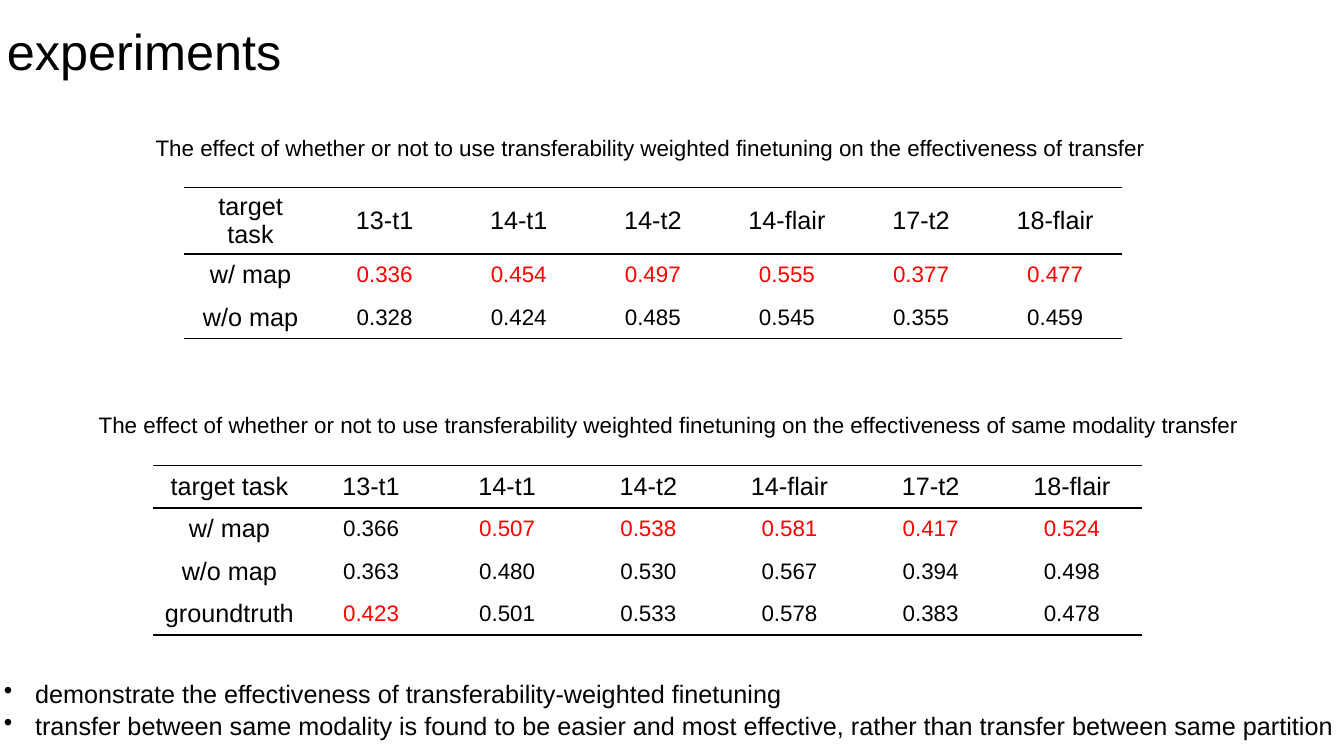
import dataclasses
import typing

import lxml.etree
import pptx
import pptx.dml.color
import pptx.enum.text
import pptx.oxml.ns
import pptx.util

Inches = pptx.util.Inches
Pt = pptx.util.Pt
ALIGN = pptx.enum.text.PP_ALIGN
ANCHOR = pptx.enum.text.MSO_ANCHOR


@dataclasses.dataclass(frozen=True)
class Theme:
    """Fonts, colours and type sizes."""
    font: str = "Arial"
    ink: str = "000000"
    best: str = "FF0000"
    title: int = 36
    label: int = 18
    value: int = 16
    rule: int = 1


@dataclasses.dataclass(frozen=True)
class TextBlock:
    """A text box and its paragraph formats."""
    lines: tuple[str, ...]
    left: float
    top: float
    width: float
    height: float
    size: int
    formats: dict[str, typing.Any]
    anchor: typing.Any = ANCHOR.TOP
    bulleted: bool = False


@dataclasses.dataclass(frozen=True)
class ScoreTable:
    """A table of scores by method and target task."""
    left: float
    top: float
    widths: tuple[float, ...]
    header_height: float
    scores: dict[str, tuple[str, ...]]


THEME = Theme()
ROW_HEIGHT = 0.42
TASKS = ("13-t1", "14-t1", "14-t2", "14-flair", "17-t2", "18-flair")
CAPTION = "The effect of whether or not to use transferability weighted finetuning on the effectiveness of "
CAPTION_FORMATS = {"alignment": ALIGN.CENTER, "line_spacing": 0.9, "space_before": Pt(10)}

TABLES = (
    ScoreTable(1.82, 1.86, (1.33,) * 7, 0.66, {
        "w/ map": ("0.336", "0.454", "0.497", "0.555", "0.377", "0.477"),
        "w/o map": ("0.328", "0.424", "0.485", "0.545", "0.355", "0.459"),
    }),
    ScoreTable(1.52, 4.62, (1.51, 1.3) + (1.4,) * 5, ROW_HEIGHT, {
        "w/ map": ("0.366", "0.507", "0.538", "0.581", "0.417", "0.524"),
        "w/o map": ("0.363", "0.480", "0.530", "0.567", "0.394", "0.498"),
        "groundtruth": ("0.423", "0.501", "0.533", "0.578", "0.383", "0.478"),
    }),
)

TEXTS = (
    TextBlock((CAPTION + "transfer",), 0.7, 1.31, 11.5, 0.37, THEME.value, CAPTION_FORMATS),
    TextBlock((CAPTION + "same modality transfer",), 0.62, 4.06, 12.02, 0.43,
              THEME.value, CAPTION_FORMATS),
    TextBlock(("experiments",), -0.03, 0, 3.91, 0.99, THEME.title, {}, ANCHOR.MIDDLE),
    TextBlock(("demonstrate the effectiveness of transferability-weighted finetuning",
               "transfer between same modality is found to be easier and most effective, "
               "rather than transfer between same partition"),
              -0.06, 6.66, 13.49, 0.71, THEME.label, {"line_spacing": 1.07}, bulleted=True),
)


def apply_formats(target: typing.Any, formats: dict[str, typing.Any]) -> None:
    """Set each named attribute on the target."""
    for name, value in formats.items():
        setattr(target, name, value)


def write_span(para: typing.Any, text: str, size: int, color: str) -> None:
    """Add one formatted span to a paragraph."""
    span = para.add_run()
    span.text = text
    apply_formats(span.font, {"name": THEME.font, "size": Pt(size), "bold": False})
    span.font.color.rgb = pptx.dml.color.RGBColor.from_string(color)


def add_bullet(para: typing.Any) -> None:
    """Give a paragraph a hanging round bullet."""
    properties = para._p.get_or_add_pPr()
    properties.set("marL", str(Inches(0.31)))
    properties.set("indent", str(Inches(-0.31)))
    bullet = lxml.etree.SubElement(properties, pptx.oxml.ns.qn("a:buChar"))
    bullet.set("char", "•")


def add_text(page: typing.Any, block: TextBlock) -> None:
    """Draw a text block."""
    box = page.shapes.add_textbox(*map(Inches, (block.left, block.top, block.width, block.height)))
    frame = box.text_frame
    apply_formats(frame, {"word_wrap": True, "vertical_anchor": block.anchor})
    for index, line in enumerate(block.lines):
        para = frame.add_paragraph() if index else frame.paragraphs[0]
        apply_formats(para, block.formats)
        if block.bulleted:
            add_bullet(para)
        write_span(para, line, block.size, THEME.ink)


def set_borders(cell: typing.Any, ruled: set[str]) -> None:
    """Rule the named edges of a cell and clear the others."""
    qn = pptx.oxml.ns.qn
    properties = cell._tc.get_or_add_tcPr()
    for index, edge in enumerate(("lnL", "lnR", "lnT", "lnB")):
        line = lxml.etree.Element(qn(f"a:{edge}"), w=str(Pt(THEME.rule)))
        if edge in ruled:
            fill = lxml.etree.SubElement(line, qn("a:solidFill"))
            lxml.etree.SubElement(fill, qn("a:srgbClr"), val=THEME.ink)
        else:
            lxml.etree.SubElement(line, qn("a:noFill"))
        properties.insert(index, line)


def add_scores(page: typing.Any, spec_table: ScoreTable) -> None:
    """Draw a score table with the best value of each task highlighted."""
    rows = [("target task", *TASKS)]
    rows += [(method, *values) for method, values in spec_table.scores.items()]
    best = [max(values, key=float) for values in zip(*spec_table.scores.values())]
    heights = [spec_table.header_height] + [ROW_HEIGHT] * len(spec_table.scores)
    frame = page.shapes.add_table(
        len(rows), len(rows[0]), Inches(spec_table.left), Inches(spec_table.top),
        Inches(sum(spec_table.widths)), Inches(sum(heights)))
    table = frame.table
    apply_formats(table, {"first_row": False, "horz_banding": False})
    for column, width in zip(table.columns, spec_table.widths):
        column.width = Inches(width)
    for row_index, texts in enumerate(rows):
        table.rows[row_index].height = Inches(heights[row_index])
        ruled = {"lnT"} if row_index < 2 else set()
        if row_index in (0, len(rows) - 1):
            ruled.add("lnB")
        for column_index, text in enumerate(texts):
            cell = table.cell(row_index, column_index)
            cell.vertical_anchor = ANCHOR.MIDDLE
            cell.fill.background()
            set_borders(cell, ruled)
            is_value = row_index > 0 and column_index > 0
            is_best = is_value and text == best[column_index - 1]
            para = cell.text_frame.paragraphs[0]
            para.alignment = ALIGN.CENTER
            write_span(para, text, THEME.value if is_value else THEME.label,
                       THEME.best if is_best else THEME.ink)


def main() -> None:
    """Build and save the deck."""
    deck = pptx.Presentation()
    apply_formats(deck, {"slide_width": Inches(13.33), "slide_height": Inches(7.5)})
    page = deck.slides.add_slide(deck.slide_layouts[6])
    for score_table in TABLES:
        add_scores(page, score_table)
    for block in TEXTS:
        add_text(page, block)
    deck.save("out.pptx")


if __name__ == "__main__":
    main()
